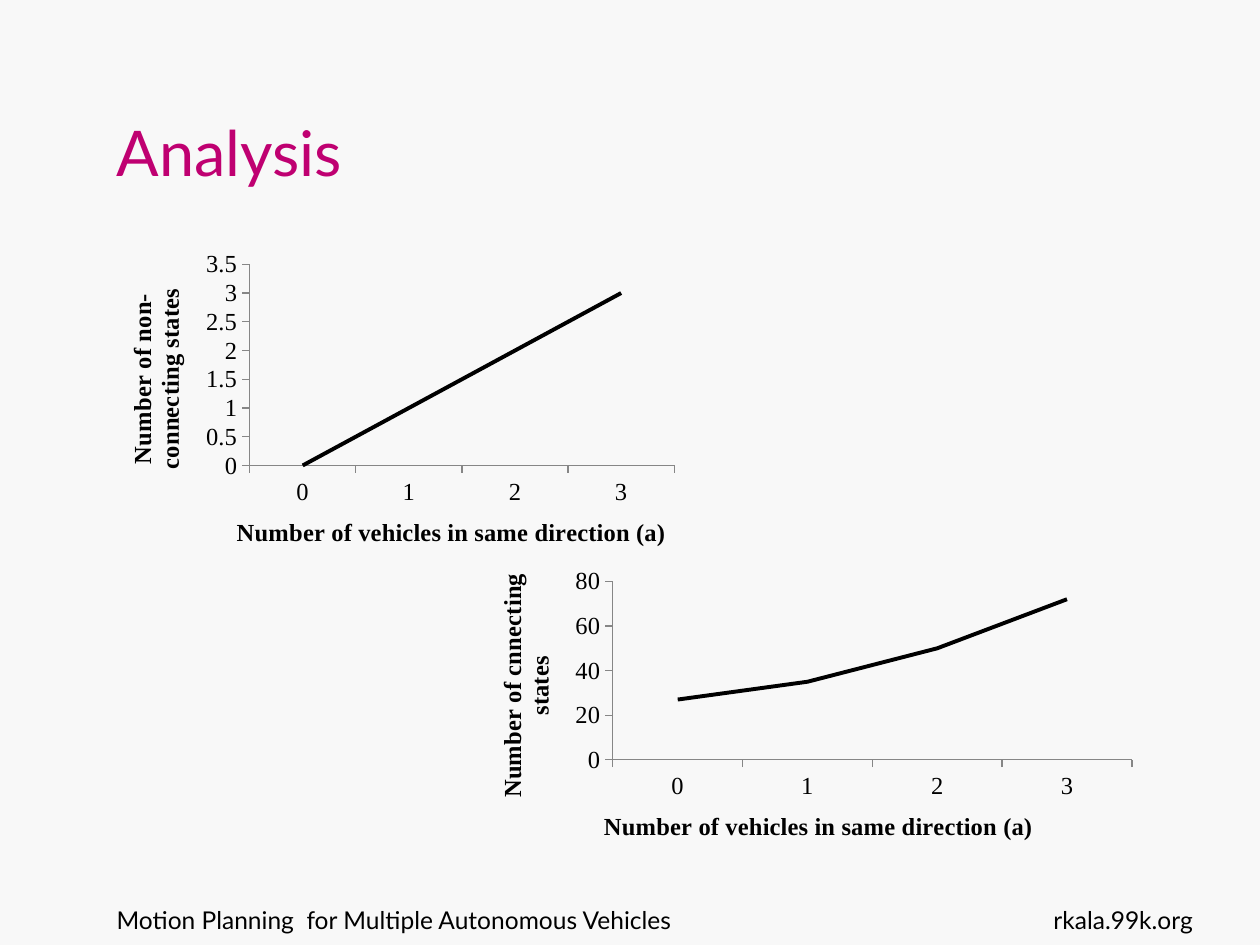
from lxml import etree
from pptx import Presentation
from pptx.chart.data import CategoryChartData
from pptx.dml.color import RGBColor
from pptx.enum.chart import XL_CHART_TYPE, XL_TICK_MARK
from pptx.enum.text import MSO_ANCHOR, PP_ALIGN
from pptx.oxml.ns import qn
from pptx.util import Cm, Pt

LINE = XL_CHART_TYPE.LINE
OUTSIDE, NO_TICK = XL_TICK_MARK.OUTSIDE, XL_TICK_MARK.NONE
TOP, BOTTOM = MSO_ANCHOR.TOP, MSO_ANCHOR.BOTTOM
LEFT, RIGHT = PP_ALIGN.LEFT, PP_ALIGN.RIGHT

BLACK = RGBColor(0x00, 0x00, 0x00)
GRAY = RGBColor(0x86, 0x86, 0x86)
MAGENTA = RGBColor(0xBF, 0x00, 0x71)
PAPER = RGBColor(0xF8, 0xF8, 0xF8)


class Deck:
    text_font = "Lato"
    chart_font = "Times New Roman"
    small = Pt(14)

    def __init__(self, prs):
        self.s = prs.slides.add_slide(prs.slide_layouts[6])
        self.s.background.fill.solid()
        self.s.background.fill.fore_color.rgb = PAPER

    def text(self, box, words, size=small, color=BLACK, align=LEFT, anchor=TOP):
        tf = self.s.shapes.add_textbox(*map(Cm, box)).text_frame
        tf.word_wrap = True
        tf.vertical_anchor = anchor
        p = tf.paragraphs[0]
        p.text = words
        p.alignment = align
        p.font.name = self.text_font
        p.font.size = size
        p.font.color.rgb = color

    def place(self, parent, index, **fractions):
        for old in parent.findall(qn("c:layout")):
            parent.remove(old)
        layout = etree.Element(qn("c:layout"))
        manual = etree.SubElement(layout, qn("c:manualLayout"))
        if "w" in fractions:
            etree.SubElement(manual, qn("c:layoutTarget"), val="inner")
        for mode in ("xMode", "yMode"):
            etree.SubElement(manual, qn(f"c:{mode}"), val="edge")
        for name, value in fractions.items():
            etree.SubElement(manual, qn(f"c:{name}"), val=str(value))
        parent.insert(index, layout)

    def axis(self, axis, title, x, y, rotation="0"):
        axis.has_major_gridlines = False
        axis.major_tick_mark = OUTSIDE
        axis.minor_tick_mark = NO_TICK
        axis.format.line.color.rgb = GRAY
        axis.format.line.width = Pt(0.75)
        tf = axis.axis_title.text_frame
        bodyPr = tf._txBody.bodyPr
        bodyPr.set("rot", rotation)
        bodyPr.set("vert", "horz")
        p = tf.paragraphs[0]
        p.text = title
        p.font.name = self.chart_font
        p.font.size = self.small
        p.font.bold = True
        p.font.color.rgb = BLACK
        self.place(axis.axis_title._element, 1, x=x, y=y)

    def line_chart(self, box, values, top, step, plot, x_title, y_title):
        data = CategoryChartData()
        data.categories = [str(i) for i in range(len(values))]
        data.add_series("Series 1", values)
        chart = self.s.shapes.add_chart(LINE, *map(Cm, box), data).chart
        chart.has_legend = False
        chart.has_title = False
        chart.font.name = self.chart_font
        chart.font.size = self.small
        chart.font.color.rgb = BLACK
        chart.plots[0].vary_by_categories = False
        series = chart.plots[0].series[0]
        series.smooth = False
        series.format.line.color.rgb = BLACK
        series.format.line.width = Pt(2.25)
        self.axis(chart.category_axis, *x_title)
        self.axis(chart.value_axis, *y_title, rotation="-5400000")
        chart.value_axis.minimum_scale = 0
        chart.value_axis.maximum_scale = top
        chart.value_axis.major_unit = step
        tick_labels = chart.value_axis.tick_labels
        tick_labels.number_format = "General"
        tick_labels.number_format_is_linked = False
        self.place(chart._chartSpace.find(".//" + qn("c:plotArea")), 0, **plot)


def main():
    prs = Presentation()
    prs.slide_width, prs.slide_height = Cm(25.4), Cm(19.05)
    deck = Deck(prs)
    vehicles = "Number of vehicles in same direction (a)"

    deck.text((2.1, 18.12, 17.6, 1.32),
              "Motion Planning  for Multiple Autonomous Vehicles")
    deck.text((2.1, 0.76, 17.2, 3.18), "Analysis", Pt(36), MAGENTA, anchor=BOTTOM)
    deck.text((20.5, 18.12, 3.8, 1.32), "rkala.99k.org", align=RIGHT)

    deck.line_chart((2.1, 4.93, 11.73, 6.65), (0, 1, 2, 3), 3.5, 0.5,
                    dict(x=0.25, y=0.06, w=0.73, h=0.61),
                    (vehicles, 0.22, 0.81),
                    ("Number of non-connecting states", 0.03, 0.12))
    deck.line_chart((9.5, 11.35, 13.59, 6.2), (27, 35, 50, 72), 80, 20,
                    dict(x=0.21, y=0.06, w=0.77, h=0.58),
                    (vehicles, 0.19, 0.79),
                    ("Number of cnnecting states", 0.03, 0.02))
    prs.save("out.pptx")


if __name__ == "__main__":
    main()
